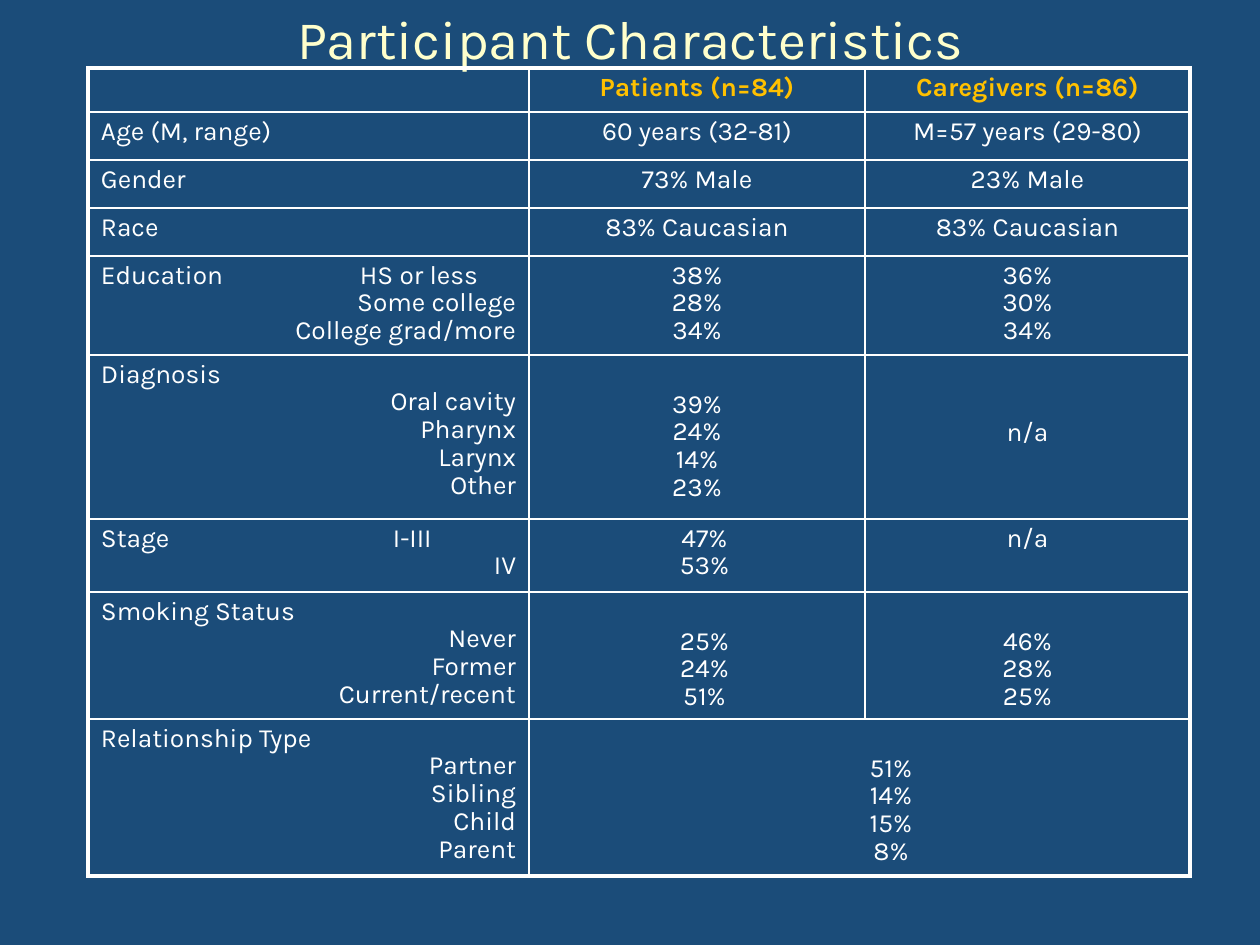
from lxml.etree import SubElement
from pptx import Presentation
from pptx.dml.color import RGBColor
from pptx.enum.text import MSO_ANCHOR, PP_ALIGN as Align
from pptx.oxml.ns import qn
from pptx.util import Pt

COLORS = {"navy": "1B4C79", "cream": "FFFFCC", "gold": "FFC000", "white": "FFFFFF"}
FONT = "Karla"
TITLE = "Participant Characteristics"
COLUMN_WIDTHS = [441, 336, 325]
INSET_X, INSET_Y = 13, 6
LINE_DROP = 30


def values(*lines, drop=0, indent=0):
    return {"lines": lines, "drop": drop, "indent": indent}


NONE = values()
ROWS = [
    (43, [], values("Patients (n=84)"), values("Caregivers (n=86)")),
    (48, ["Age (M, range)"], values("60 years (32-81)"), values("M=57 years (29-80)")),
    (48, ["Gender"], values("73% Male"), values("23% Male")),
    (48, ["Race"], values("83% Caucasian"), values("83% Caucasian")),
    (99, ["Education\tHS or less", "Some college", "College grad/more"],
     values("38%", "28%", "34%"), values("36%", "30%", "34%")),
    (164, ["Diagnosis", "Oral cavity", "Pharynx", "Larynx", "Other"],
     values("39%", "24%", "14%", "23%", drop=LINE_DROP), values("n/a", drop=58)),
    (73, ["Stage\tI-III", "IV"], values("47%", "53%", indent=15), values("n/a")),
    (127, ["Smoking Status", "Never", "Former", "Current/recent"],
     values("25%", "24%", "51%", drop=LINE_DROP, indent=15),
     values("46%", "28%", "25%", drop=LINE_DROP)),
    (157, ["Relationship Type", "Partner", "Sibling", "Child", "Parent"],
     values("51%", "14%", "15%", "8%", drop=LINE_DROP, indent=63), NONE),
]
TAB_STOPS = {"Education": 259, "Stage": 292}


def px(length):
    return round(length * 914400 / 126)


def add_span(para, text, size, color, bold=False):
    span = para.add_run()
    span.text = text
    span.font.name, span.font.size, span.font.bold = FONT, Pt(size), bold
    span.font.color.rgb = RGBColor.from_string(COLORS[color])


def add_tab(para, position):
    tabs = SubElement(para._p.get_or_add_pPr(), qn("a:tabLst"))
    SubElement(tabs, qn("a:tab"), pos=str(px(position)), algn="l")


def draw_borders(cell, outer_edges):
    properties = cell._tc.get_or_add_tcPr()
    for side in "LRTB":
        width = Pt(2.25 if side in outer_edges else 1)
        line = SubElement(properties, qn("a:ln" + side), w=str(width))
        fill = SubElement(line, qn("a:solidFill"))
        SubElement(fill, qn("a:srgbClr"), val=COLORS["white"])


def write_lines(cell, lines, is_label, is_header, indent):
    frame = cell.text_frame
    for index, text in enumerate(lines):
        para = frame.paragraphs[0] if index == 0 else frame.add_paragraph()
        para.line_spacing = 0.9
        if is_label:
            para.alignment = Align.RIGHT if index else Align.LEFT
        else:
            para.alignment = Align.CENTER
        if indent:
            para._p.get_or_add_pPr().set("marL", str(px(indent)))
        if "\t" in text:
            add_tab(para, TAB_STOPS[text.split("\t")[0]])
        add_span(para, text, 15, "gold" if is_header else "white", is_header)
    if not lines:
        SubElement(frame.paragraphs[0]._p, qn("a:endParaRPr"), sz="1500")


def add_title(page):
    title = page.shapes.title
    title.left, title.top, title.width, title.height = map(px, (63, -10, 1134, 95))
    title.text_frame.vertical_anchor = MSO_ANCHOR.MIDDLE
    para = title.text_frame.paragraphs[0]
    para.alignment = Align.CENTER
    add_span(para, TITLE, 31, "cream")


def add_characteristics(page):
    heights = [row[0] for row in ROWS]
    frame = page.shapes.add_table(len(ROWS), len(COLUMN_WIDTHS), px(88), px(68),
                                  px(sum(COLUMN_WIDTHS)), px(sum(heights)))
    table = frame.table
    table.first_row = table.horz_banding = False
    for column, width in zip(table.columns, COLUMN_WIDTHS):
        column.width = px(width)
    last_row, last_column = len(ROWS) - 1, len(COLUMN_WIDTHS) - 1
    table.cell(last_row, 1).merge(table.cell(last_row, last_column))

    for r, (height, label, *groups) in enumerate(ROWS):
        table.rows[r].height = px(height)
        for c, content in enumerate([values(*label), *groups]):
            cell = table.cell(r, c)
            if cell.is_spanned:
                continue
            right = c + (cell.span_width if cell.is_merge_origin else 1) - 1
            edges = {"L": c == 0, "R": right == last_column,
                     "T": r == 0, "B": r == last_row}
            draw_borders(cell, [side for side, outer in edges.items() if outer])
            cell.fill.background()
            cell.margin_left = cell.margin_right = px(INSET_X)
            cell.margin_top = px(INSET_Y + content["drop"])
            cell.margin_bottom = px(INSET_Y)
            write_lines(cell, content["lines"], c == 0, r == 0, content["indent"])


def main():
    deck = Presentation()
    deck.slide_width, deck.slide_height = px(1260), px(945)
    page = deck.slides.add_slide(deck.slide_layouts[5])
    page.background.fill.solid()
    page.background.fill.fore_color.rgb = RGBColor.from_string(COLORS["navy"])
    add_title(page)
    add_characteristics(page)
    deck.save("out.pptx")


if __name__ == "__main__":
    main()
